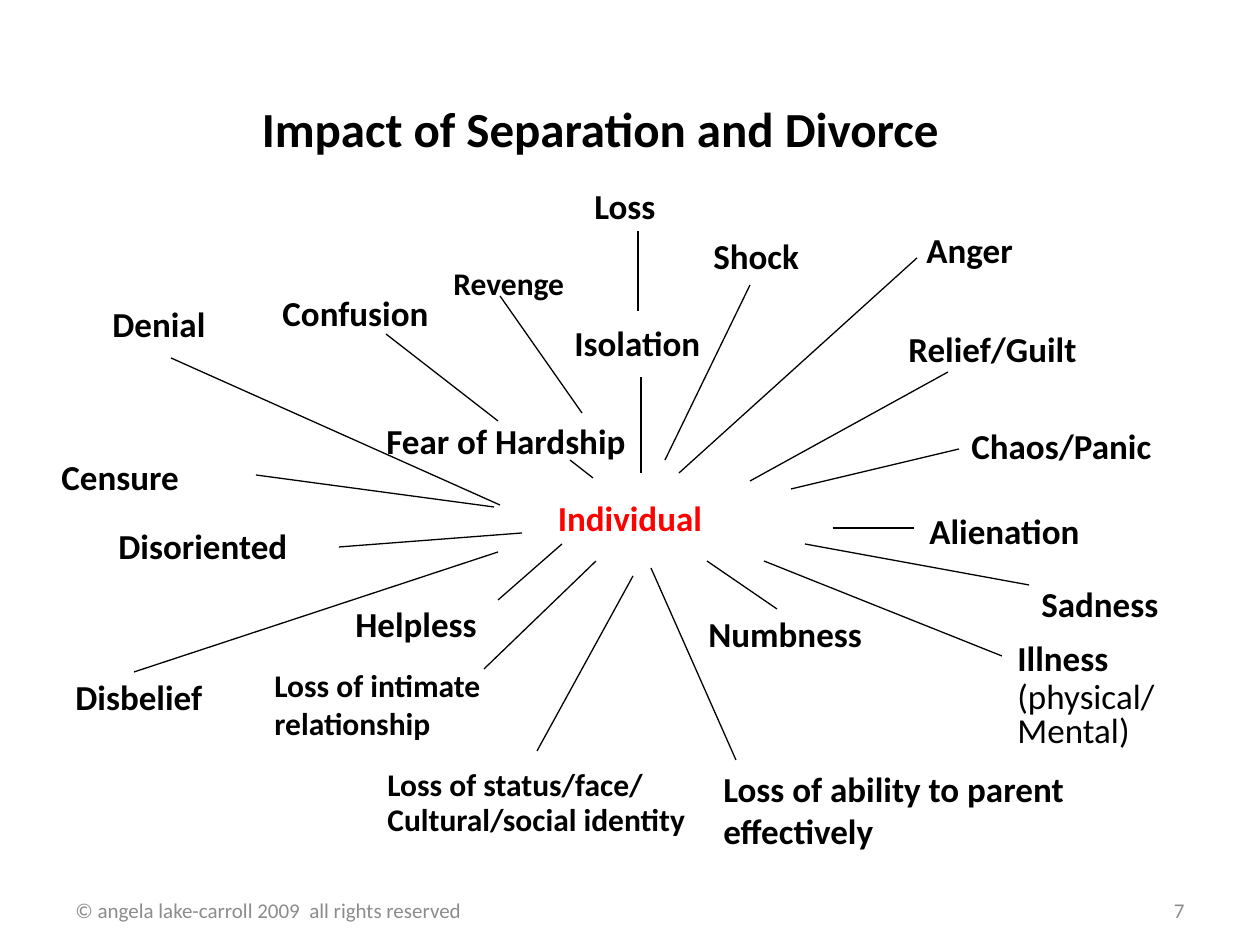
from lxml import etree
from pptx import Presentation
from pptx import util as u
from pptx.dml.color import RGBColor
from pptx.enum import shapes, text
from pptx.oxml.ns import qn

PX_PER_INCH = 126
BLACK, RED, GREY = "000000", "FF0000", "8C8C8C"

# wording, left, top, width
IMPACTS = [
    ("Loss", 582, 178, 168),
    ("Disbelief", 63, 669, 280),
    ("Disoriented", 106, 518, 280),
    ("Helpless", 343, 596, 224),
    ("Censure", 49, 449, 252),
    ("Denial", 100, 296, 224),
    ("Fear of Hardship", 374, 413, 314),
    ("Confusion", 270, 285, 307),
    ("Isolation", 562, 315, 266),
    ("Anger", 914, 222, 224),
    ("Relief/Guilt", 896, 321, 266),
    ("Chaos/Panic", 959, 418, 301),
    ("Alienation", 917, 503, 252),
    ("Sadness", 1029, 576, 224),
    ("Numbness", 696, 606, 280),
    ("Shock", 701, 228, 129),
]

# x and y of the inner end, then of the outer end
SPOKES = [
    (638, 311, 638, 231),   # Loss
    (596, 561, 484, 669),   # Loss of intimate relationship
    (633, 576, 537, 751),   # Loss of status
    (707, 561, 777, 609),   # Numbness
    (651, 568, 736, 760),   # Loss of ability to parent
    (764, 561, 1002, 656),  # Illness
    (805, 544, 1029, 585),  # Sadness
    (833, 528, 914, 528),   # Alienation
    (791, 489, 959, 449),   # Chaos/Panic
    (750, 481, 948, 372),   # Relief/Guilt
    (679, 473, 917, 258),   # Anger
    (665, 460, 750, 285),   # Shock
    (498, 552, 134, 672),   # Disbelief
    (562, 544, 498, 600),   # Helpless
    (522, 533, 339, 547),   # Disoriented
    (494, 507, 256, 475),   # Censure
    (500, 505, 171, 358),   # Denial
    (498, 421, 386, 334),   # Confusion
    (593, 478, 570, 460),   # Fear of Hardship
    (641, 473, 641, 377),   # Isolation
    (582, 413, 500, 296),   # Revenge
]


def px(count):
    return round(count * u.Inches(1) / PX_PER_INCH)


def rgb(value):
    return RGBColor.from_string(value)


def add_text(slide, lines, left, top, width, height=55, size=20, color=BLACK,
             align=text.PP_ALIGN.LEFT, anchor=text.MSO_ANCHOR.TOP):
    """Add a text box; each line is (wording, bold, line spacing)."""
    box = slide.shapes.add_textbox(px(left), px(top), px(width), px(height))
    frame = box.text_frame
    frame.word_wrap = True
    frame.vertical_anchor = anchor
    for index, (wording, bold, spacing) in enumerate(lines):
        para = frame.add_paragraph() if index else frame.paragraphs[0]
        para.alignment = align
        para.line_spacing = spacing
        if index:
            para.space_before = u.Pt(size / 2)
        span = para.add_run()
        span.text = wording
        span.font.name = "Calibri"
        span.font.size = u.Pt(size)
        span.font.bold = bold
        span.font.color.rgb = rgb(color)


def add_label(slide, wording, left, top, width, height=55, **style):
    add_text(slide, [(wording, True, 1.0)], left, top, width, height, **style)


def add_spoke(slide, *ends):
    line = slide.shapes.add_connector(
        shapes.MSO_CONNECTOR.STRAIGHT, *(px(end) for end in ends))
    line.line.color.rgb = rgb(BLACK)
    line.line.width = u.Pt(0.75)
    etree.SubElement(line._element.spPr, qn("a:effectLst"))


def add_footer(slide, wording, left, width, align):
    add_text(slide, [(wording, False, 1.0)], left, 885, width, 50, size=12,
             color=GREY, align=align, anchor=text.MSO_ANCHOR.MIDDLE)


def main():
    deck = Presentation()
    deck.slide_width, deck.slide_height = px(1260), px(945)
    slide = deck.slides.add_slide(deck.slide_layouts[6])
    center = text.PP_ALIGN.CENTER

    add_text(slide, [("Impact of Separation and Divorce", True, 1.4)],
             137, 69, 926, 96, size=28, align=center)
    add_label(slide, "Individual", 497, 490, 266, color=RED, align=center)
    for impact in IMPACTS:
        add_label(slide, *impact)
    add_label(slide, "Revenge", 441, 258, 192, 50, size=18)
    add_label(slide, "Loss of intimate relationship", 262, 660, 333, 89, size=18)
    add_label(slide, "Loss of ability to parent effectively", 711, 761, 392, 97)
    add_text(slide, [("Loss of status/face/", True, 0.5),
                     ("Cultural/social identity", True, 0.5)],
             375, 775, 336, 71, size=18)
    add_text(slide, [("Illness", True, 1.0), ("(physical/", False, 0.4),
                     ("Mental)", False, 0.4)], 1005, 630, 255, 131)
    for spoke in SPOKES:
        add_spoke(slide, *spoke)

    add_footer(slide, "© angela lake-carroll 2009  all rights reserved",
               63, 488, text.PP_ALIGN.LEFT)
    add_footer(slide, "7", 1092, 105, text.PP_ALIGN.RIGHT)
    deck.save("out.pptx")


if __name__ == "__main__":
    main()
